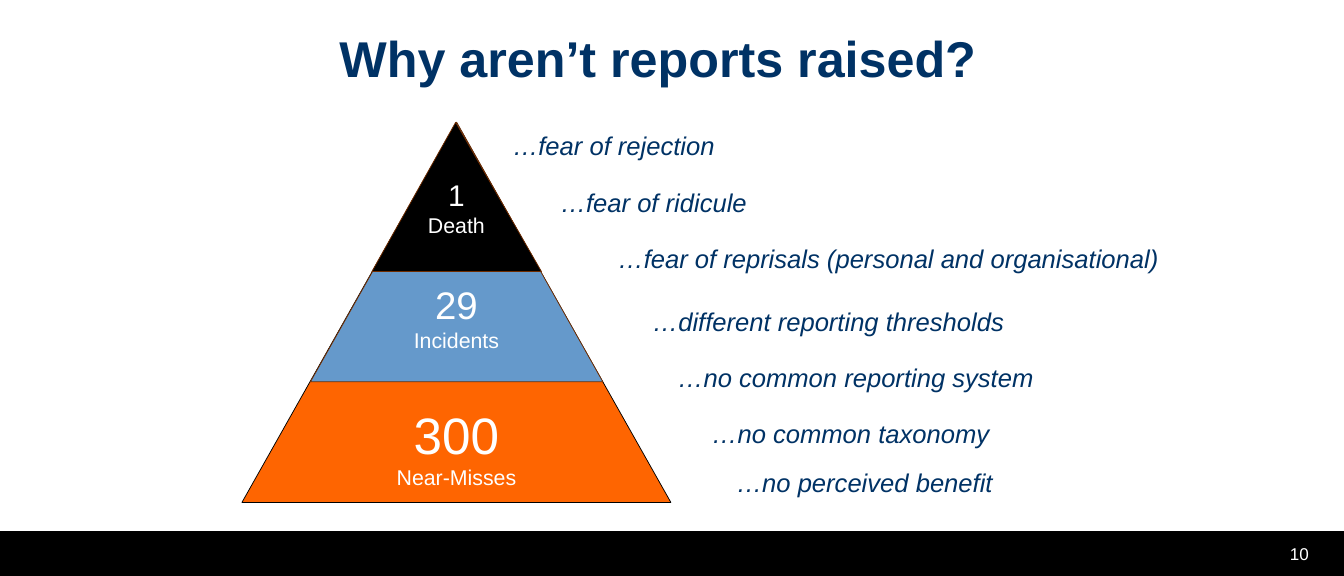
from pptx import Presentation
from pptx.dml.color import RGBColor
from pptx.enum.shapes import MSO_SHAPE
from pptx.enum.text import MSO_ANCHOR, PP_ALIGN
from pptx.util import Inches, Pt

WHITE = RGBColor(0xFF, 0xFF, 0xFF)
BLACK = RGBColor(0, 0, 0)
NAVY = RGBColor(0x00, 0x32, 0x65)
ORANGE = RGBColor(0xFE, 0x65, 0x01)
BLUE = RGBColor(0x65, 0x99, 0xCB)
BROWN = RGBColor(0x6F, 0x2C, 0x00)

TIERS = [
    (0, 7.82, 6.93, ORANGE, BLACK, 0.5),
    (1.25, 5.33, 4.73, BLUE, BROWN, 0.5),
    (2.37, 3.09, 2.72, BLACK, BROWN, 0.494),
]
CAPTIONS = [
    (1.01, 1.07, "1", 39.2, "Death"),
    (2.92, 1.25, "29", 50.4, "Incidents"),
    (5.15, 1.52, "300", 67.2, "Near-Misses"),
]
REASONS = [
    (0, 0, 5.74, "…fear of rejection"),
    (0.87, 1.03, 5.74, "…fear of ridicule"),
    (1.92, 2.05, 10.41, "…fear of reprisals (personal and organisational)"),
    (2.55, 3.2, 7.45, "…different reporting thresholds"),
    (3.01, 4.23, 7.12, "…no common reporting system"),
    (3.63, 5.25, 5.74, "…no common taxonomy"),
    (4.08, 6.13, 5.74, "…no perceived benefit"),
]


def add_text(slide, left, top, width, height, lines, color,
             align=PP_ALIGN.LEFT, bold=False, italic=False):
    box = slide.shapes.add_textbox(Inches(left), Inches(top), Inches(width), Inches(height))
    tf = box.text_frame
    tf.word_wrap = True
    tf.vertical_anchor = MSO_ANCHOR.MIDDLE
    tf.margin_top = tf.margin_bottom = 0
    for i, (text, size) in enumerate(lines):
        p = tf.add_paragraph() if i else tf.paragraphs[0]
        p.text = text
        p.alignment = align
        font = p.runs[0].font
        font.name = "Arial"
        font.size = Pt(size)
        font.bold = bold
        font.italic = italic
        font.color.rgb = color


def add_title(slide, left, top, width, height):
    add_text(slide, left, top, width, height, [("Why aren’t reports raised?", 66)],
             NAVY, PP_ALIGN.CENTER, bold=True)


def add_pyramid(slide, left, top, width):
    for dx, w, h, fill, line, apex in TIERS:
        sp = slide.shapes.add_shape(MSO_SHAPE.ISOSCELES_TRIANGLE, Inches(left + dx),
                                    Inches(top), Inches(w), Inches(h))
        sp.adjustments[0] = apex
        sp.shadow.inherit = False
        sp.fill.solid()
        sp.fill.fore_color.rgb = fill
        sp.line.color.rgb = line
        sp.line.width = Pt(1)
    for dy, h, count, size, label in CAPTIONS:
        add_text(slide, left, top + dy, width, h, [(count, size), (label, 28)],
                 WHITE, PP_ALIGN.CENTER)


def add_reasons(slide, left, top):
    for dx, dy, w, text in REASONS:
        add_text(slide, left + dx, top + dy, w, 0.67, [(text, 33.6)], NAVY, italic=True)


def add_footer(slide, left, top, width, height):
    bar = slide.shapes.add_shape(MSO_SHAPE.RECTANGLE, Inches(left), Inches(top),
                                 Inches(width), Inches(height))
    bar.shadow.inherit = False
    bar.fill.solid()
    bar.fill.fore_color.rgb = BLACK
    bar.line.fill.background()
    add_text(slide, left + width - 6.05, top + 0.19, 5.51, 0.45, [("10", 22.4)],
             WHITE, PP_ALIGN.RIGHT)


def main():
    prs = Presentation()
    prs.slide_width = Inches(24.5)
    prs.slide_height = Inches(10.5)
    s = prs.slides.add_slide(prs.slide_layouts[6])
    add_footer(s, 0, 9.68, 24.5, 0.82)
    add_pyramid(s, 4.41, 2.23, 7.82)
    add_title(s, 3.95, 0.44, 16.09, 1.21)
    add_reasons(s, 9.25, 2.32)
    prs.save("out.pptx")


if __name__ == "__main__":
    main()
